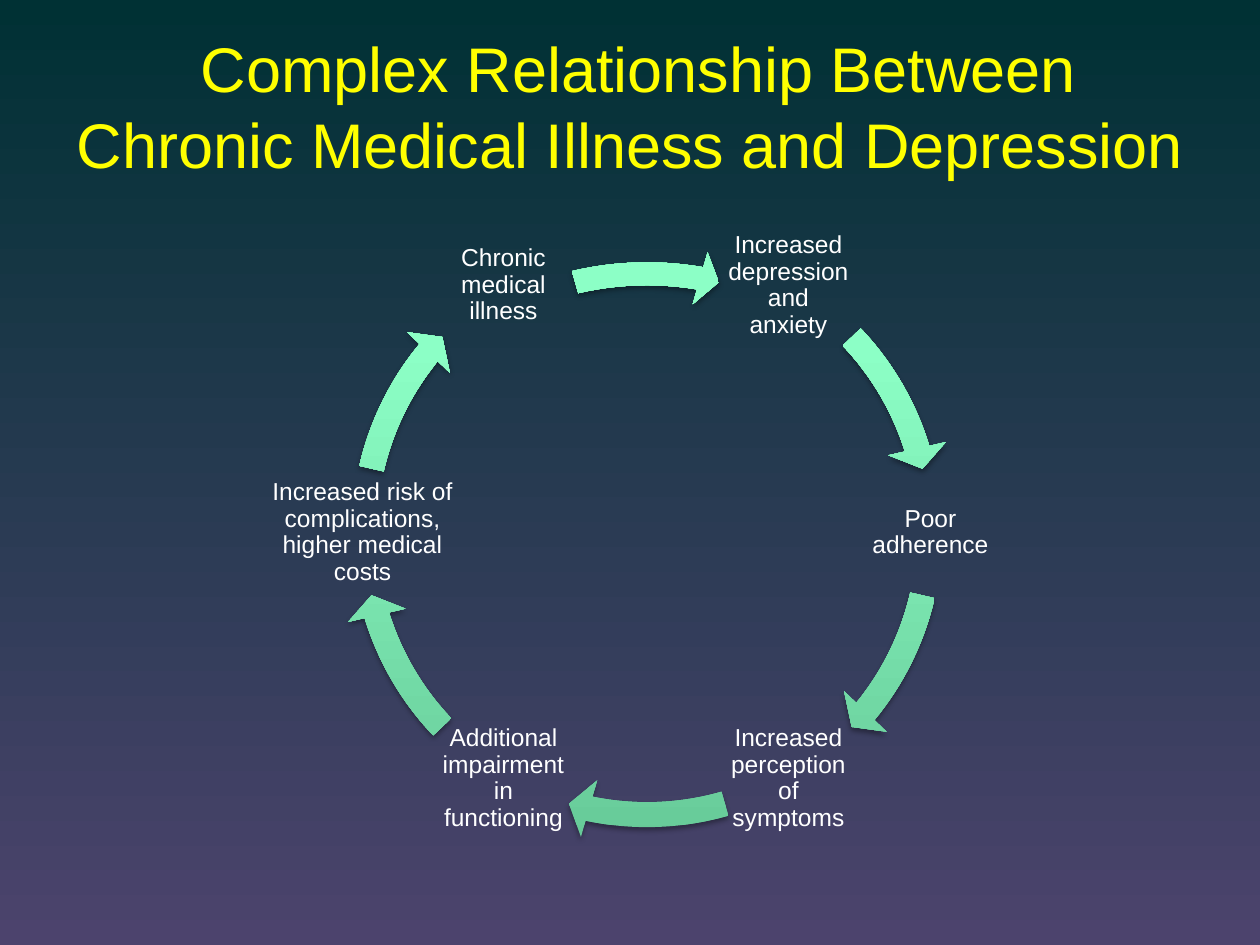
from copy import deepcopy
from typing import NamedTuple

from lxml.etree import SubElement
from pptx import Presentation
from pptx.dml.color import RGBColor
from pptx.enum.shapes import MSO_SHAPE as Preset
from pptx.enum.text import MSO_ANCHOR as Anchor, PP_ALIGN as Align
from pptx.oxml.ns import qn
from pptx.util import Emu, Pt

WIDTH, HEIGHT = 1260, 945
SCALE = 914400 / 126
RING = (335, 220, 624, 624)
TOP_RING = (335, 247, 624, 571)
STAGE_HEIGHT = 127


class Stage(NamedTuple):
    """A step of the cycle and the arrow that leaves it (angles in degrees)."""
    text: str
    center_x: int
    center_y: int
    arrow_start: float
    arrow_end: float
    width: int = 127
    ring: tuple = RING


STAGES = [
    Stage("Increased depression and anxiety", 788, 285, 316.41, 342.87),
    Stage("Poor adherence", 930, 532, 12.96, 39.42),
    Stage("Increased perception of symptoms", 788, 778, 73.99, 101.83),
    Stage("Additional impairment in functioning", 503, 778, 136.41, 162.87),
    Stage("Increased risk of complications, higher medical costs",
          362, 532, 192.96, 219.42, width=193),
    Stage("Chronic medical illness", 503, 285, 253.99, 281.83, ring=TOP_RING),
]


def px(*lengths: int) -> list[Emu]:
    return [Emu(round(length * SCALE)) for length in lengths]


def color(code: str) -> RGBColor:
    return RGBColor.from_string(code)


def apply(target, values: dict) -> None:
    for name, value in values.items():
        setattr(target, name, value)


def set_gradient(fill, angle: int, *stops: tuple[float, str]) -> None:
    """Fill with two stops; the angle runs counter-clockwise."""
    fill.gradient()
    fill.gradient_angle = angle
    for stop, (position, code) in zip(fill.gradient_stops, stops):
        stop.position = position
        stop.color.rgb = color(code)


def add_text(page, text: str, bounds: tuple, size: int, code: str,
             spacing: float, inset: int, inset_y: int) -> None:
    box = page.shapes.add_textbox(*px(*bounds))
    side, edge = px(inset, inset_y)
    apply(box.text_frame, dict(
        word_wrap=True, vertical_anchor=Anchor.MIDDLE, margin_left=side,
        margin_right=side, margin_top=edge, margin_bottom=edge))
    para = box.text_frame.paragraphs[0]
    apply(para, dict(alignment=Align.CENTER, line_spacing=spacing))
    span = para.add_run()
    span.text = text
    apply(span.font, dict(name="Arial", size=Pt(size)))
    span.font.color.rgb = color(code)


def add_shadow(shape) -> None:
    shape.shadow.inherit = False
    effects = shape._element.spPr.find(qn("a:effectLst"))
    shadow = SubElement(effects, qn("a:outerShdw"), blurRad=str(Pt(3.1)),
                        dist=str(Pt(1.8)), dir="5400000", rotWithShape="0")
    tint = SubElement(shadow, qn("a:srgbClr"), val="000000")
    SubElement(tint, qn("a:alpha"), val="35000")


def add_arrow(page, stage: Stage) -> None:
    arrow = page.shapes.add_shape(Preset.CIRCULAR_ARROW, *px(*stage.ring))
    # Angles are stored in 60000ths of a degree, adjustments in 100000ths.
    angles = [degrees * 0.6 for degrees in
              (4.18, stage.arrow_end, stage.arrow_start)]
    for index, value in enumerate([0.04, *angles, 0.047]):
        arrow.adjustments[index] = value
    set_gradient(arrow.fill, 90, (0, "67CA98"), (0.8, "8CFFC6"))
    stops = arrow._element.spPr.find(".//" + qn("a:gsLst"))
    last = deepcopy(stops[-1])
    last.set("pos", "100000")
    last[0].set("val", "8EFFC7")
    stops.append(last)
    arrow.line.fill.background()
    add_shadow(arrow)


def main() -> None:
    deck = Presentation()
    deck.slide_width, deck.slide_height = px(WIDTH, HEIGHT)
    page = deck.slides.add_slide(deck.slide_layouts[6])
    set_gradient(page.background.fill, 270, (0, "003134"), (1, "4C436D"))
    add_text(page, " Complex Relationship Between Chronic Medical Illness and Depression",
             (63, 27, 1134, 157), 36, "FFFF00", 1.0, 12, 6)
    for stage in STAGES:
        bounds = (stage.center_x - stage.width // 2,
                  stage.center_y - STAGE_HEIGHT // 2, stage.width, STAGE_HEIGHT)
        add_text(page, stage.text, bounds, 14, "FFFFFF", 0.9, 2, 2)
        add_arrow(page, stage)
    deck.save("out.pptx")


if __name__ == "__main__":
    main()
